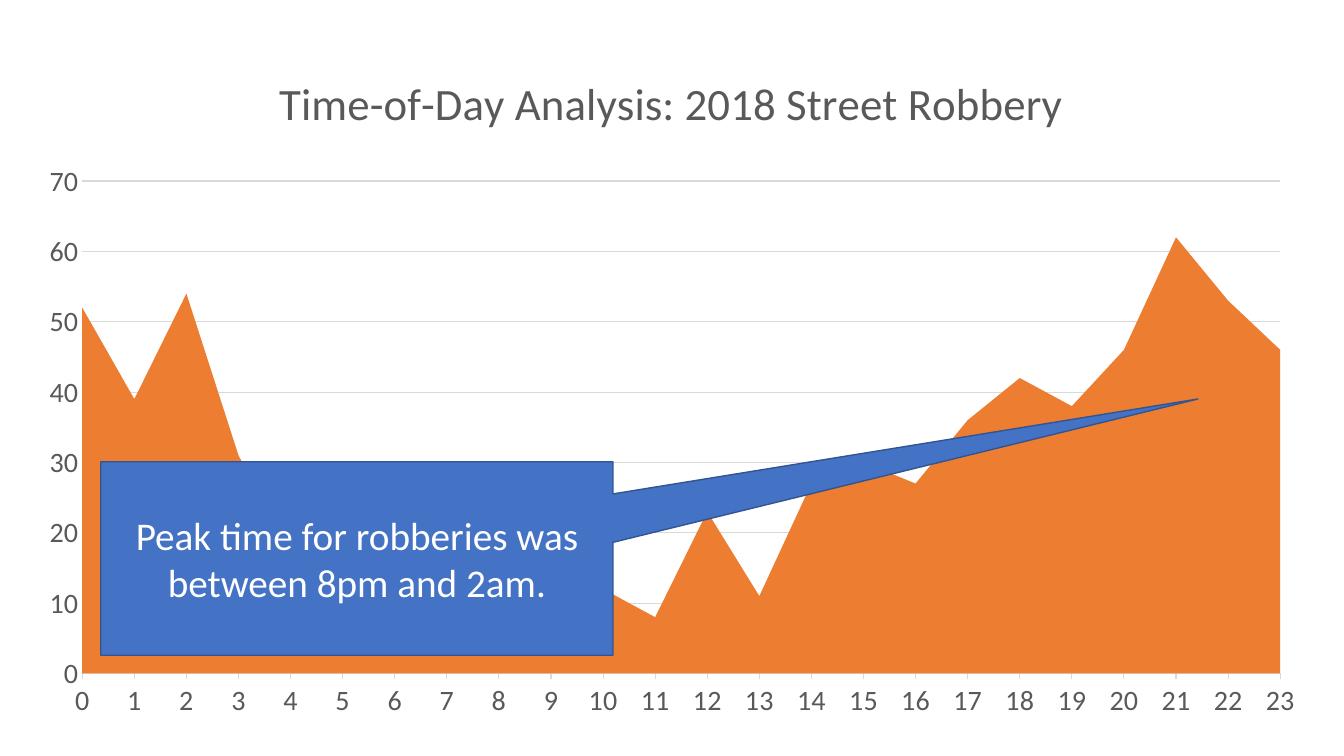
from lxml import etree
from pptx import Presentation
from pptx.chart.data import CategoryChartData
from pptx.dml.color import RGBColor
from pptx.enum.chart import XL_CHART_TYPE, XL_TICK_MARK
from pptx.enum.shapes import MSO_SHAPE
from pptx.enum.text import MSO_ANCHOR, PP_ALIGN
from pptx.oxml import parse_xml
from pptx.oxml.ns import nsdecls
from pptx.util import Inches, Pt

AREA = XL_CHART_TYPE.AREA
CALLOUT = MSO_SHAPE.RECTANGULAR_CALLOUT
OUT, NONE = XL_TICK_MARK.OUTSIDE, XL_TICK_MARK.NONE
MIDDLE, CENTER = MSO_ANCHOR.MIDDLE, PP_ALIGN.CENTER

ORANGE = RGBColor(0xED, 0x7D, 0x31)
BLUE = RGBColor(0x44, 0x72, 0xC4)
NAVY = RGBColor(0x32, 0x54, 0x91)
GRAY = RGBColor(0x59, 0x59, 0x59)
PALE = RGBColor(0xD9, 0xD9, 0xD9)
WHITE = RGBColor(0xFF, 0xFF, 0xFF)

FONT = "Calibri"
WIDTH, HEIGHT = Inches(13.33), Inches(7.5)
TITLE = "Time-of-Day Analysis: 2018 Street Robbery"
NOTE = "Peak time for robberies was between 8pm and 2am."
COUNTS = [52, 39, 54, 31, 17, 17, 10, 8, 10, 14, 12, 8,
          23, 11, 27, 30, 27, 36, 42, 38, 46, 62, 53, 46]

# Boxes as shares of the slide: left, top, width, height
CHART_BOX = (0.0173, 0.06, 0.9647, 0.9067)
NOTE_BOX = (0.075, 0.6107, 0.3811, 0.256)
# Plot area as shares of the chart
PLOT_BOX = {"x": 0.0455, "y": 0.198, "w": 0.924, "h": 0.7185}


def place(box):
    left, top, width, height = box
    return (int(left * WIDTH), int(top * HEIGHT),
            int(width * WIDTH), int(height * HEIGHT))


def style(font, size, color):
    font.name = FONT
    font.size = Pt(size)
    font.bold = False
    font.color.rgb = color


def draw_line(line, color, width):
    line.color.rgb = color
    line.width = Pt(width)


def fix_plot(chart):
    """Pin the inner plot area and start the area on the value axis."""
    plot = chart.plots[0]._element.getparent()
    for old in plot.findall("{*}layout"):
        plot.remove(old)
    layout = parse_xml(f"<c:layout {nsdecls('c')}><c:manualLayout/></c:layout>")
    items = [("layoutTarget", "inner"), ("xMode", "edge"), ("yMode", "edge")]
    for name, val in items + list(PLOT_BOX.items()):
        tag = etree.QName(layout).namespace
        etree.SubElement(layout[0], f"{{{tag}}}{name}").set("val", str(val))
    plot.insert(0, layout)
    for cross in plot.iter("{*}crossBetween"):
        cross.set("val", "midCat")


def add_area(slide):
    data = CategoryChartData()
    data.categories = [str(hour) for hour in range(len(COUNTS))]
    data.add_series("Series 1", COUNTS)
    chart = slide.shapes.add_chart(AREA, *place(CHART_BOX), data).chart
    chart.has_legend = False
    style(chart.font, 20, GRAY)

    # Title
    chart.has_title = True
    run = chart.chart_title.text_frame.paragraphs[0].add_run()
    run.text = TITLE
    style(run.font, 32, GRAY)
    chart.chart_title.include_in_layout = False

    # Series
    plot = chart.plots[0]
    plot.vary_by_categories = False
    fill = plot.series[0].format.fill
    fill.solid()
    fill.fore_color.rgb = ORANGE

    # Axes
    hours, count = chart.category_axis, chart.value_axis
    for axis, tick in ((hours, OUT), (count, NONE)):
        axis.major_tick_mark = tick
        axis.minor_tick_mark = NONE
        style(axis.tick_labels.font, 20, GRAY)
    hours.has_major_gridlines = False
    draw_line(hours.format.line, PALE, 0.75)
    count.minimum_scale, count.maximum_scale = 0, 70
    count.major_unit = 10
    count.has_major_gridlines = True
    draw_line(count.major_gridlines.format.line, PALE, 0.75)
    count.format.line.fill.background()
    fix_plot(chart)


def add_note(slide):
    note = slide.shapes.add_shape(CALLOUT, *place(NOTE_BOX))
    note.adjustments[0], note.adjustments[1] = 1.642, -0.824
    note.shadow.inherit = False
    note.fill.solid()
    note.fill.fore_color.rgb = BLUE
    draw_line(note.line, NAVY, 1)
    frame = note.text_frame
    frame.word_wrap = True
    frame.vertical_anchor = MIDDLE
    para = frame.paragraphs[0]
    para.alignment = CENTER
    run = para.add_run()
    run.text = NOTE
    style(run.font, 28, WHITE)


def main():
    deck = Presentation()
    deck.slide_width, deck.slide_height = WIDTH, HEIGHT
    slide = deck.slides.add_slide(deck.slide_layouts[6])
    add_area(slide)
    add_note(slide)
    deck.save("out.pptx")


if __name__ == "__main__":
    main()
